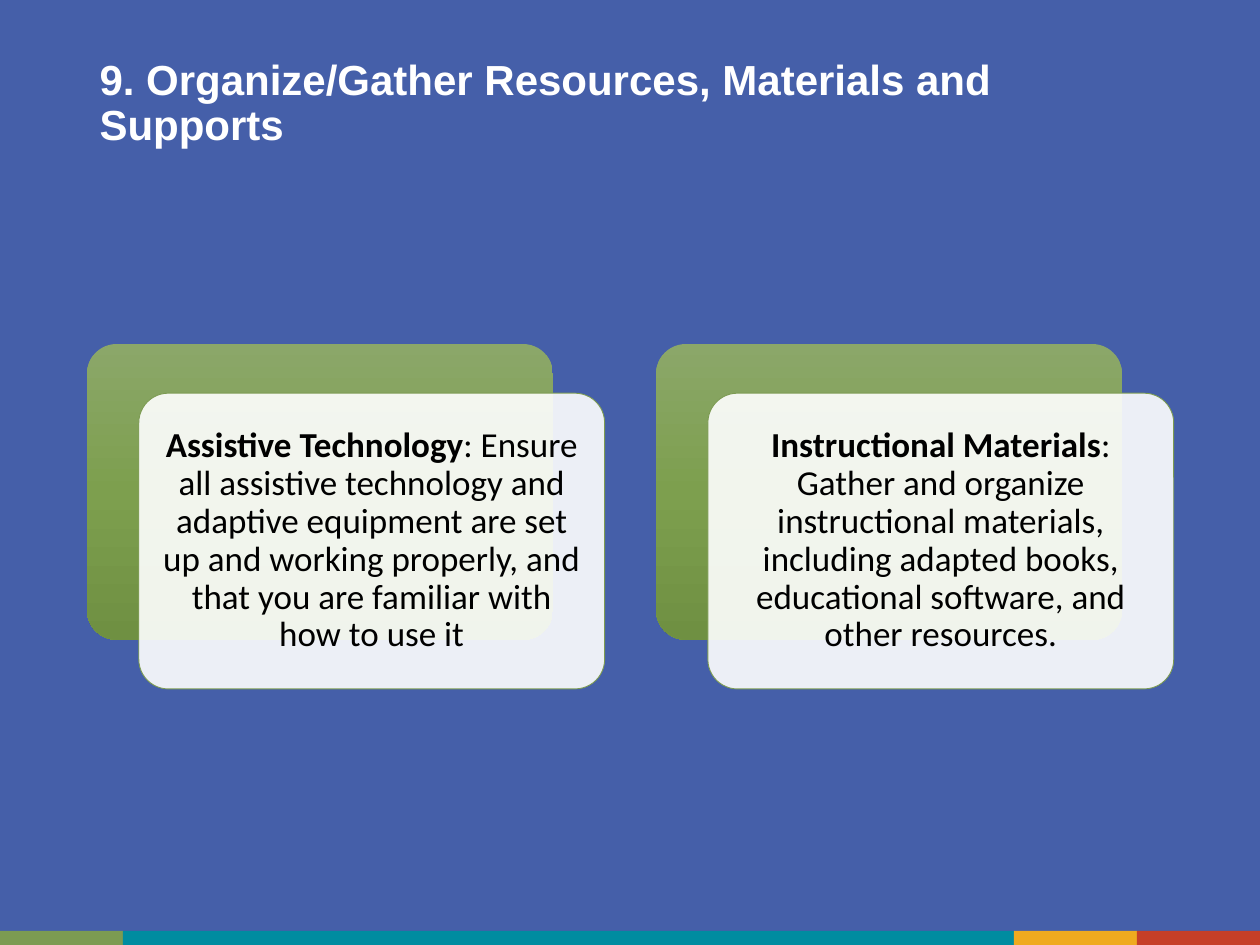
from copy import deepcopy
from dataclasses import dataclass
from typing import Any

from pptx import Presentation
from pptx.dml.color import RGBColor
from pptx.enum import shapes, text
from pptx.oxml import ns, xmlchemy
from pptx.util import Pt


@dataclass(frozen=True)
class Theme:
    background: str = "455FA9"
    title_color: str = "FFFFFF"
    body_color: str = "000000"
    card_fill: str = "FFFFFF"
    card_line: str = "7C9B52"
    card_opacity: int = 90
    panel_gradient: tuple[str, ...] = ("8BA769", "7D9F4E", "6F9042")
    title_font: str = "Arial"
    body_font: str = "Calibri"
    title_size: float = 24
    body_size: float = 20


@dataclass(frozen=True)
class Box:
    left: float
    top: float
    width: float
    height: float

    def shifted(self, across: float, down: float = 0) -> "Box":
        return Box(self.left + across, self.top + down, self.width, self.height)

    def lengths(self) -> tuple[Pt, Pt, Pt, Pt]:
        return Pt(self.left), Pt(self.top), Pt(self.width), Pt(self.height)


@dataclass(frozen=True)
class Topic:
    heading: str
    detail: str


@dataclass(frozen=True)
class Band:
    width: float
    color: str


THEME = Theme()
SLIDE_WIDTH, SLIDE_HEIGHT = 720, 540
TITLE_BOX = Box(49.7, 28.8, 620.6, 61.9)
PANEL_BOX = Box(49.7, 196.6, 266.2, 169)
PANEL_PITCH = 325.2
CARD_OFFSET = (29.6, 28.1)
BAND_HEIGHT = 8

TOPICS = (
    Topic("Assistive Technology",
          ": Ensure all assistive technology and adaptive equipment are set up "
          "and working properly, and that you are familiar with how to use it"),
    Topic("Instructional Materials",
          ": Gather and organize instructional materials, including adapted "
          "books, educational software, and other resources."),
)
BANDS = (Band(70.3, "7C9B52"), Band(509.1, "008CA0"),
         Band(70.3, "EFAA1F"), Band(70.3, "C63F28"))


def add_text(paragraph: Any, content: str, *, font: str, size: float,
             color: str, bold: bool = False) -> None:
    run = paragraph.add_run()
    run.text = content
    run.font.name = font
    run.font.size = Pt(size)
    run.font.bold = bold
    run.font.color.rgb = RGBColor.from_string(color)


def add_block(slide: Any, kind: shapes.MSO_SHAPE, box: Box) -> Any:
    shape = slide.shapes.add_shape(kind, *box.lengths())
    shape.shadow.inherit = False
    shape.line.fill.background()
    if kind == shapes.MSO_SHAPE.ROUNDED_RECTANGLE:
        shape.adjustments[0] = 0.1
    return shape


def fill_solid(shape: Any, color: str, opacity: int = 100) -> None:
    shape.fill.solid()
    shape.fill.fore_color.rgb = RGBColor.from_string(color)
    if opacity < 100:
        color_element = shape._element.spPr.find(
            f"{ns.qn('a:solidFill')}/{ns.qn('a:srgbClr')}")
        alpha = xmlchemy.OxmlElement("a:alpha")
        alpha.set("val", str(opacity * 1000))
        color_element.append(alpha)


def fill_gradient(shape: Any, colors: tuple[str, ...]) -> None:
    shape.fill.gradient()
    shape.fill.gradient_angle = 270
    # The default gradient has two stops; add those that are missing
    stop_list = shape._element.spPr.find(
        f"{ns.qn('a:gradFill')}/{ns.qn('a:gsLst')}")
    while len(stop_list) < len(colors):
        stop_list.append(deepcopy(stop_list[0]))
    for index, (stop, color) in enumerate(zip(shape.fill.gradient_stops, colors)):
        stop.position = index / (len(colors) - 1)
        stop.color.rgb = RGBColor.from_string(color)


def add_title(slide: Any, content: str) -> None:
    title = slide.shapes.title
    title.left, title.top, title.width, title.height = TITLE_BOX.lengths()
    frame = title.text_frame
    frame.word_wrap = True
    frame.auto_size = text.MSO_AUTO_SIZE.NONE
    frame.vertical_anchor = text.MSO_ANCHOR.MIDDLE
    paragraph = frame.paragraphs[0]
    paragraph.alignment = text.PP_ALIGN.LEFT
    paragraph.line_spacing = 0.9
    add_text(paragraph, content, font=THEME.title_font, size=THEME.title_size,
             color=THEME.title_color, bold=True)


def add_topic(slide: Any, topic: Topic, box: Box) -> None:
    rounded = shapes.MSO_SHAPE.ROUNDED_RECTANGLE
    # Green panel behind
    fill_gradient(add_block(slide, rounded, box), THEME.panel_gradient)

    # Translucent card in front
    card = add_block(slide, rounded, box.shifted(*CARD_OFFSET))
    fill_solid(card, THEME.card_fill, THEME.card_opacity)
    card.line.color.rgb = RGBColor.from_string(THEME.card_line)
    card.line.width = Pt(0.5)

    # Card text
    frame = card.text_frame
    frame.word_wrap = True
    frame.vertical_anchor = text.MSO_ANCHOR.MIDDLE
    frame.margin_left = frame.margin_right = Pt(6)
    frame.margin_top = frame.margin_bottom = Pt(6)
    paragraph = frame.paragraphs[0]
    paragraph.alignment = text.PP_ALIGN.CENTER
    paragraph.line_spacing = 0.9
    paragraph.space_after = Pt(7)
    for content, bold in ((topic.heading, True), (topic.detail, False)):
        add_text(paragraph, content, font=THEME.body_font, size=THEME.body_size,
                 color=THEME.body_color, bold=bold)


def add_bands(slide: Any) -> None:
    left = 0.0
    for band in BANDS:
        box = Box(left, SLIDE_HEIGHT - BAND_HEIGHT, band.width, BAND_HEIGHT)
        fill_solid(add_block(slide, shapes.MSO_SHAPE.RECTANGLE, box), band.color)
        left += band.width


def main() -> None:
    presentation = Presentation()
    presentation.slide_width = Pt(SLIDE_WIDTH)
    presentation.slide_height = Pt(SLIDE_HEIGHT)
    slide = presentation.slides.add_slide(presentation.slide_layouts[5])
    fill = slide.background.fill
    fill.solid()
    fill.fore_color.rgb = RGBColor.from_string(THEME.background)

    add_bands(slide)
    add_title(slide, "9. Organize/Gather Resources, Materials and Supports")
    for index, topic in enumerate(TOPICS):
        add_topic(slide, topic, PANEL_BOX.shifted(index * PANEL_PITCH))

    presentation.save("out.pptx")


if __name__ == "__main__":
    main()
